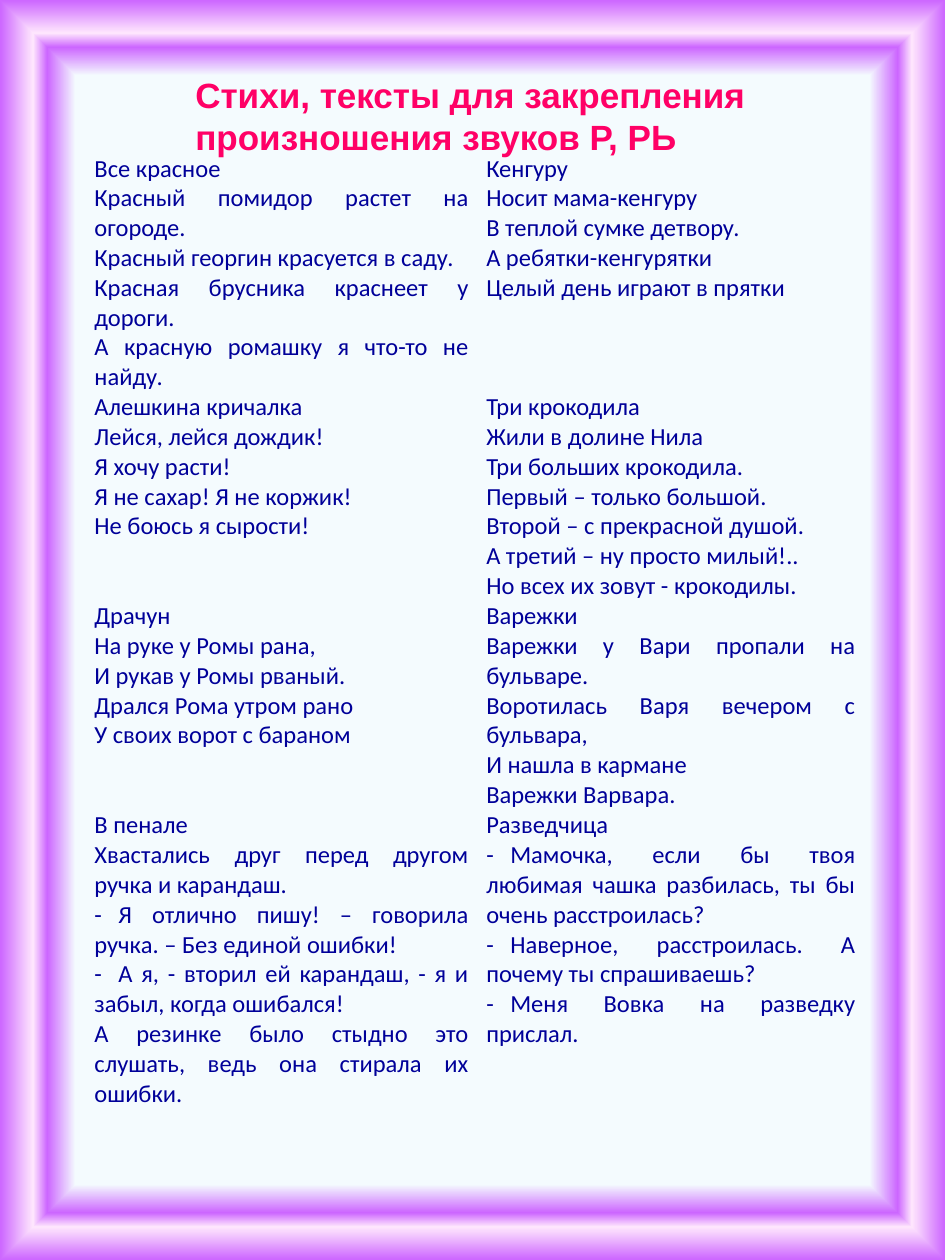
"""Build a one-page sheet of verses and short texts for practising the sounds Р and РЬ."""
from dataclasses import dataclass

from pptx import Presentation
from pptx.dml.color import RGBColor
from pptx.enum.text import MSO_ANCHOR as Anchor, MSO_AUTO_SIZE as AutoSize, PP_ALIGN as Align
from pptx.oxml import parse_xml
from pptx.oxml.ns import nsdecls, qn
from pptx.slide import Slide
from pptx.table import _Cell as Cell
from pptx.util import Inches, Pt


@dataclass(frozen=True)
class Style:
    font: str
    size: int
    color: str
    bold: bool = False


@dataclass(frozen=True)
class Theme:
    title: Style = Style("Arial", 20, "FF0066", True)
    verse: Style = Style("Calibri", 14, "000099")
    frame: tuple[tuple[int, str], ...] = (
        (84, "F4FBFE"), (90, "CC66FF"), (93, "FFE7FD"), (100, "CC66FF"))
    no_grid: str = "{2D5ABB26-0587-4C30-8999-92F81FD0307C}"


@dataclass(frozen=True)
class Grid:
    left: float = 0.68
    top: float = 1.22
    cols: tuple[float, ...] = (3.11, 3.07)
    rows: tuple[float, ...] = (1.89, 1.66, 1.66, 2.49)
    margin: float = 0.07
    dash_tab: float = 0.19


@dataclass(frozen=True)
class Verse:
    name: str
    lines: tuple[str, ...]


THEME = Theme()
GRID = Grid()
TITLE = ("Стихи, тексты для закрепления", "произношения звуков Р, РЬ")
VERSES = (
    Verse("Все красное", (
        "Красный помидор растет на огороде.",
        "Красный георгин красуется в саду.",
        "Красная брусника краснеет у дороги.",
        "А красную ромашку я что-то не найду.")),
    Verse("Кенгуру", (
        "Носит мама-кенгуру",
        "В теплой сумке детвору.",
        "А ребятки-кенгурятки",
        "Целый день играют в прятки")),
    Verse("Алешкина кричалка", (
        "Лейся, лейся дождик!",
        "Я хочу расти!",
        "Я не сахар! Я не коржик!",
        "Не боюсь я сырости!")),
    Verse("Три крокодила", (
        "Жили в долине Нила",
        "Три больших крокодила.",
        "Первый – только большой.",
        "Второй – с прекрасной душой.",
        "А третий – ну просто милый!..",
        "Но всех их зовут - крокодилы.")),
    Verse("Драчун", (
        "На руке у Ромы рана,",
        "И рукав у Ромы рваный.",
        "Дрался Рома утром рано",
        "У своих ворот с бараном")),
    Verse("Варежки", (
        "Варежки у Вари пропали на бульваре.",
        "Воротилась Варя вечером с бульвара,",
        "И нашла в кармане",
        "Варежки Варвара.")),
    Verse("В пенале", (
        "Хвастались друг перед другом ручка и карандаш.",
        "-\tЯ отлично пишу! – говорила ручка. – Без единой ошибки!",
        "-\tА я, - вторил ей карандаш, - я и забыл, когда ошибался!",
        "А резинке было стыдно это слушать, ведь она стирала их ошибки.")),
    Verse("Разведчица", (
        "-\tМамочка, если бы твоя любимая чашка разбилась, ты бы очень расстроилась?",
        "-\tНаверное, расстроилась. А почему ты спрашиваешь?",
        "-\tМеня Вовка на разведку прислал.")),
)


def write(tf, lines: tuple[str, ...], style: Style) -> None:
    """Write each line as a justified paragraph of one run."""
    for i, line in enumerate(lines):
        p = tf.add_paragraph() if i else tf.paragraphs[0]
        p.alignment = Align.JUSTIFY
        if "\t" in line:
            p._p.get_or_add_pPr().append(parse_xml(
                f'<a:tabLst {nsdecls("a")}>'
                f'<a:tab pos="{Inches(GRID.dash_tab)}" algn="l"/></a:tabLst>'))
        r = p.add_run()
        r.text = line
        r.font.name, r.font.size, r.font.bold = style.font, Pt(style.size), style.bold
        r.font.color.rgb = RGBColor.from_string(style.color)


def paint_frame(s: Slide) -> None:
    """Give the slide a rectangular gradient that frames the page."""
    s.background.fill.solid()
    stops = "".join(
        f'<a:gs pos="{pos * 1000}"><a:srgbClr val="{color}"/></a:gs>'
        for pos, color in THEME.frame)
    solid = s.element.find(".//" + qn("p:bgPr"))[0]
    solid.getparent().replace(solid, parse_xml(
        f'<a:gradFill {nsdecls("a")} rotWithShape="1"><a:gsLst>{stops}</a:gsLst>'
        '<a:path path="rect"><a:fillToRect l="50000" t="50000" r="50000" b="50000"/>'
        '</a:path></a:gradFill>'))


def place_title(s: Slide) -> None:
    """Move the title placeholder and fill it."""
    sp = s.shapes.title
    sp.left, sp.top, sp.width, sp.height = map(Inches, (1.45, 0.53, 4.68, 0.77))
    tf = sp.text_frame
    tf.word_wrap = False
    tf.auto_size = AutoSize.NONE
    tf.vertical_anchor = Anchor.TOP
    write(tf, TITLE, THEME.title)


def fill_cell(cell: Cell, verse: Verse) -> None:
    """Put one verse with its name into a clear cell."""
    cell.fill.background()
    cell.margin_left = cell.margin_right = Inches(GRID.margin)
    cell.margin_top = cell.margin_bottom = 0
    write(cell.text_frame, (verse.name, *verse.lines), THEME.verse)


def add_verses(s: Slide) -> None:
    """Lay the verses out in a borderless table."""
    frame = s.shapes.add_table(
        len(GRID.rows), len(GRID.cols), Inches(GRID.left), Inches(GRID.top),
        Inches(sum(GRID.cols)), Inches(sum(GRID.rows)))
    table = frame.table
    table.first_row = table.horz_banding = False
    frame._element.find(".//" + qn("a:tableStyleId")).text = THEME.no_grid
    for col, width in zip(table.columns, GRID.cols):
        col.width = Inches(width)
    for row, height in zip(table.rows, GRID.rows):
        row.height = Inches(height)
    for cell, verse in zip(table.iter_cells(), VERSES):
        fill_cell(cell, verse)


def main() -> None:
    """Build and save the sheet."""
    prs = Presentation()
    prs.slide_width, prs.slide_height = Inches(7.5), Inches(10)
    s = prs.slides.add_slide(prs.slide_layouts.get_by_name("Title Only"))
    paint_frame(s)
    place_title(s)
    add_verses(s)
    prs.save("out.pptx")


if __name__ == "__main__":
    main()
